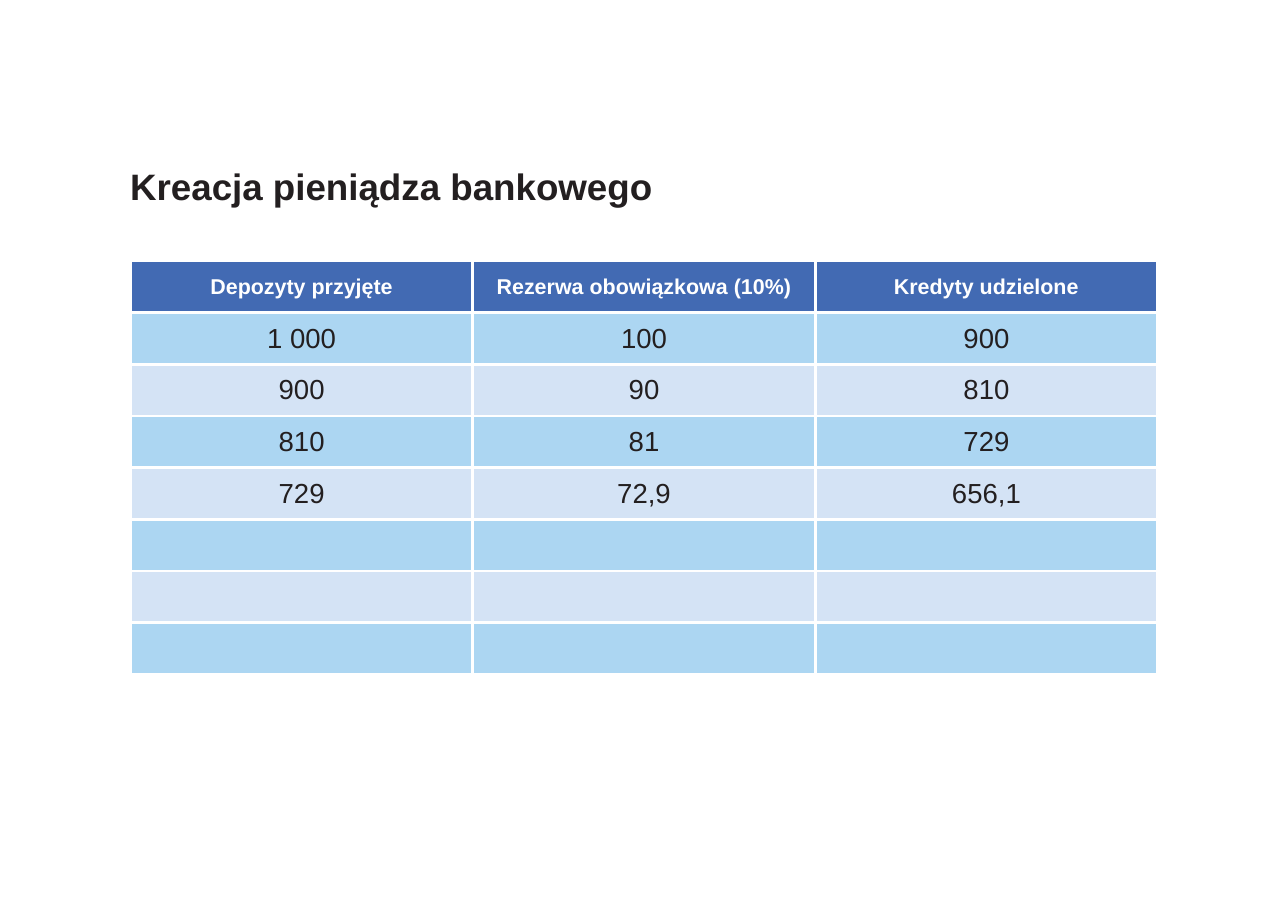
"""Build a slide with a table on the creation of bank money."""
import dataclasses

import pptx
import pptx.dml.color
import pptx.enum.text
import pptx.oxml
import pptx.oxml.ns
import pptx.util
from pptx.util import Cm


@dataclasses.dataclass(frozen=True)
class Theme:
    font: str = "Arial"
    ink: str = "231F20"
    white: str = "FFFFFF"
    header: str = "426AB3"
    bands: tuple = ("ACD6F2", "D4E3F5")
    title_size: int = 24
    header_size: int = 14
    value_size: int = 18
    border_width: int = 2


THEME = Theme()
TITLE = "Kreacja pieniądza bankowego"
HEADINGS = ("Depozyty przyjęte", "Rezerwa obowiązkowa (10%)", "Kredyty udzielone")
VALUES = (
    ("1 000", "100", "900"),
    ("900", "90", "810"),
    ("810", "81", "729"),
    ("729", "72,9", "656,1"),
)
EMPTY_ROWS = 3
COLUMN_WIDTHS = (Cm(7.87), Cm(7.92), Cm(7.87))
ROW_HEIGHT = Cm(1.19)


def rgb(color):
    return pptx.dml.color.RGBColor.from_string(color)


def format_paragraph(paragraph, size, color, bold, alignment):
    paragraph.alignment = alignment
    paragraph.font.name = THEME.font
    paragraph.font.size = pptx.util.Pt(size)
    paragraph.font.bold = bold
    paragraph.font.color.rgb = rgb(color)


def add_title(slide):
    title = slide.shapes.title
    title.left, title.top, title.width, title.height = Cm(3), Cm(3.76), Cm(23.77), Cm(1.04)
    frame = title.text_frame
    frame.text = TITLE
    frame.margin_left = frame.margin_right = frame.margin_top = frame.margin_bottom = 0
    frame.auto_size = pptx.enum.text.MSO_AUTO_SIZE.NONE
    frame.vertical_anchor = pptx.enum.text.MSO_ANCHOR.BOTTOM
    format_paragraph(frame.paragraphs[0], THEME.title_size, THEME.ink, True,
                     pptx.enum.text.PP_ALIGN.LEFT)


def add_border(cell, side):
    width = pptx.util.Pt(THEME.border_width)
    line = pptx.oxml.parse_xml(
        f'<a:{side} {pptx.oxml.ns.nsdecls("a")} w="{width}"><a:solidFill>'
        f'<a:srgbClr val="{THEME.white}"/></a:solidFill></a:{side}>')
    cell._tc.get_or_add_tcPr().append(line)


def format_cell(cell, text, fill, size, color, bold):
    cell.text = text
    cell.margin_left = cell.margin_right = cell.margin_top = cell.margin_bottom = 0
    cell.vertical_anchor = pptx.enum.text.MSO_ANCHOR.MIDDLE
    cell.fill.solid()
    cell.fill.fore_color.rgb = rgb(fill)
    format_paragraph(cell.text_frame.paragraphs[0], size, color, bold,
                     pptx.enum.text.PP_ALIGN.CENTER)


def add_money_table(slide):
    rows = (HEADINGS, *VALUES, *[("",) * len(HEADINGS)] * EMPTY_ROWS)
    last_row, last_column = len(rows) - 1, len(HEADINGS) - 1
    table = slide.shapes.add_table(
        len(rows), len(HEADINGS), Cm(3.02), Cm(6.02),
        sum(COLUMN_WIDTHS), ROW_HEIGHT * len(rows)).table
    table.first_row = table.horz_banding = False
    for column, width in zip(table.columns, COLUMN_WIDTHS):
        column.width = width
    for row_index, row in enumerate(rows):
        table.rows[row_index].height = ROW_HEIGHT
        if row_index == 0:
            style = (THEME.header, THEME.header_size, THEME.white, True)
        else:
            band = THEME.bands[(row_index - 1) % len(THEME.bands)]
            style = (band, THEME.value_size, THEME.ink, False)
        for column_index, text in enumerate(row):
            cell = table.cell(row_index, column_index)
            inner_sides = {
                "lnL": column_index > 0,
                "lnR": column_index < last_column,
                "lnT": row_index > 0,
                "lnB": row_index < last_row,
            }
            for side, is_inner in inner_sides.items():
                if is_inner:
                    add_border(cell, side)
            format_cell(cell, text, *style)


def main():
    presentation = pptx.Presentation()
    presentation.slide_width, presentation.slide_height = Cm(29.7), Cm(21)
    slide = presentation.slides.add_slide(presentation.slide_layouts[5])
    add_title(slide)
    add_money_table(slide)
    presentation.save("out.pptx")


if __name__ == "__main__":
    main()
